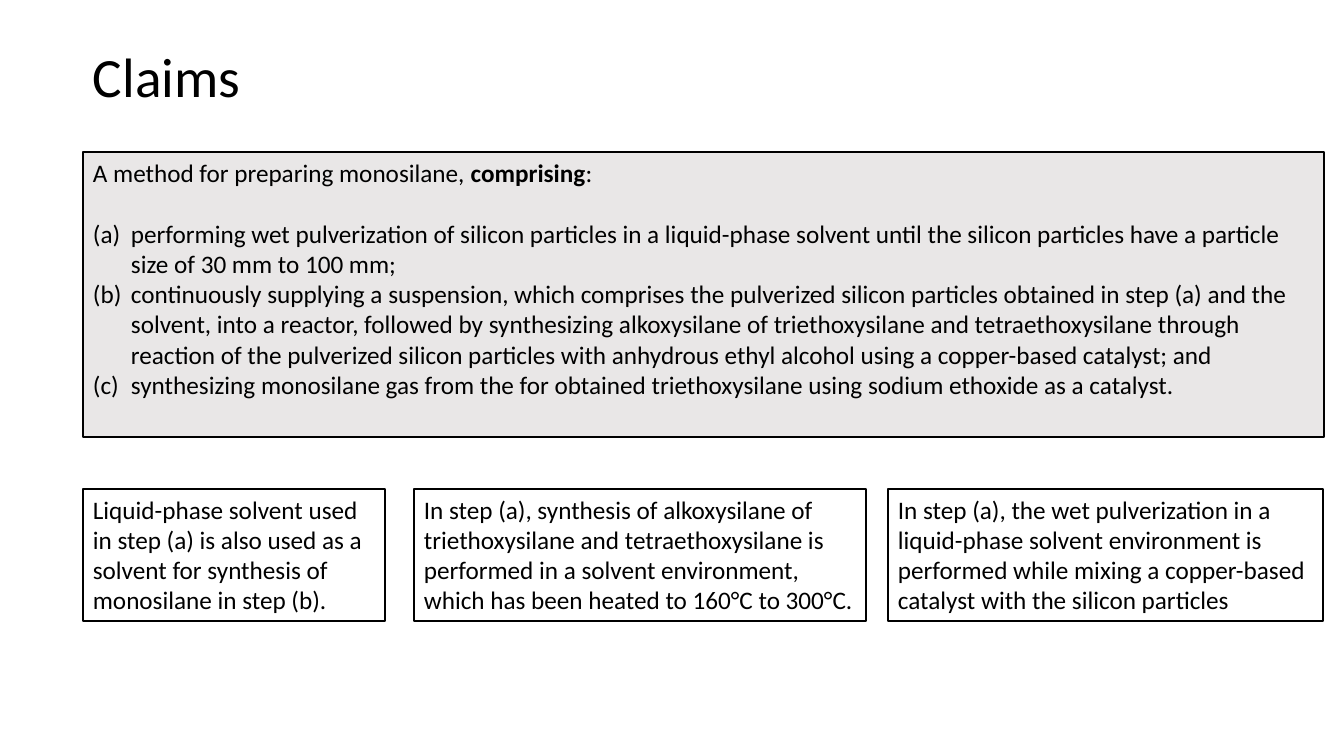
from lxml.etree import SubElement
from pptx import Presentation
from pptx.dml.color import RGBColor
from pptx.enum.shapes import MSO_SHAPE as Shape
from pptx.enum.text import MSO_ANCHOR as Anchor, PP_ALIGN as Align
from pptx.oxml.ns import qn
from pptx.util import Pt

EMU_PER_PX = 914400 / 100.8
BODY_FONT = {"name": "Calibri", "size": Pt(18), "bold": False}
TITLE_FONT = {"name": "Calibri", "size": Pt(39.6), "bold": False}
HANGING_INDENT = 38
LEFT = 83
DEPENDENT_TOP, DEPENDENT_HEIGHT = 489, 132

INTRODUCTION = [("A method for preparing monosilane, ", False), ("comprising", True), (":", False)]
STEPS = [
    "performing wet pulverization of silicon particles in a liquid-phase solvent until the "
    "silicon particles have a particle size of 30 mm to 100 mm;",
    "continuously supplying a suspension, which comprises the pulverized silicon particles "
    "obtained in step (a) and the solvent, into a reactor, followed by synthesizing "
    "alkoxysilane of triethoxysilane and tetraethoxysilane through reaction of the pulverized "
    "silicon particles with anhydrous ethyl alcohol using a copper-based catalyst; and",
    "synthesizing monosilane gas from the for obtained triethoxysilane using sodium ethoxide "
    "as a catalyst.",
]
DEPENDENT_CLAIMS = [  # left, width, text
    (LEFT, 302, "Liquid-phase solvent used in step (a) is also used as a solvent for synthesis "
                "of monosilane in step (b)."),
    (414, 452, "In step (a), synthesis of alkoxysilane of triethoxysilane and "
               "tetraethoxysilane is performed in a solvent environment, which has been "
               "heated to 160°C to 300°C."),
    (888, 435, "In step (a), the wet pulverization in a liquid-phase solvent environment is "
               "performed while mixing a copper-based catalyst with the silicon particles"),
]


def px(length):
    return round(length * EMU_PER_PX)


def color(value):
    return RGBColor.from_string(value)


def set_attributes(target, values):
    for name, value in values.items():
        setattr(target, name, value)


def add_run(paragraph, text, font=BODY_FONT, **changes):
    run = paragraph.add_run()
    run.text = text
    set_attributes(run.font, {**font, **changes})
    run.font.color.rgb = color("000000")


def add_title(slide, text):
    frame = slide.shapes.add_textbox(px(LEFT), px(42), px(1159), px(76)).text_frame
    set_attributes(frame, {"word_wrap": True, "vertical_anchor": Anchor.MIDDLE})
    paragraph = frame.paragraphs[0]
    paragraph.line_spacing = 0.9
    add_run(paragraph, text, TITLE_FONT)


def add_claim_box(slide, left, top, width, height, fill="FFFFFF"):
    """Add an outlined box and return its empty text frame."""
    shape = slide.shapes.add_shape(Shape.RECTANGLE, px(left), px(top), px(width), px(height))
    shape.shadow.inherit = False
    shape.fill.solid()
    shape.fill.fore_color.rgb = color(fill)
    shape.line.color.rgb = color("000000")
    shape.line.width = Pt(1)
    frame = shape.text_frame
    set_attributes(frame, {"word_wrap": True, "vertical_anchor": Anchor.TOP})
    frame.paragraphs[0].alignment = Align.LEFT
    return frame


def add_step(frame, text):
    """Add a paragraph numbered (a), (b), (c) with a hanging indent."""
    paragraph = frame.add_paragraph()
    paragraph.alignment = Align.LEFT
    properties = paragraph._p.get_or_add_pPr()
    properties.set("marL", str(px(HANGING_INDENT)))
    properties.set("indent", str(-px(HANGING_INDENT)))
    SubElement(properties, qn("a:buFont"), typeface="+mj-lt")
    SubElement(properties, qn("a:buAutoNum"), type="alphaLcParenBoth")
    add_run(paragraph, text)
    return paragraph


def add_main_claim(slide):
    frame = add_claim_box(slide, LEFT, 152, 1241, 285, "E9E7E7")
    for text, bold in INTRODUCTION:
        add_run(frame.paragraphs[0], text, bold=bold)
    steps = [add_step(frame, text) for text in STEPS]
    steps[0].space_before = Pt(22)


def main():
    presentation = Presentation()
    set_attributes(presentation, {"slide_width": px(1344), "slide_height": px(756)})
    slide = presentation.slides.add_slide(presentation.slide_layouts[6])
    add_title(slide, "Claims")
    add_main_claim(slide)
    for left, width, text in DEPENDENT_CLAIMS:
        frame = add_claim_box(slide, left, DEPENDENT_TOP, width, DEPENDENT_HEIGHT)
        add_run(frame.paragraphs[0], text)
    presentation.save("out.pptx")


if __name__ == "__main__":
    main()
